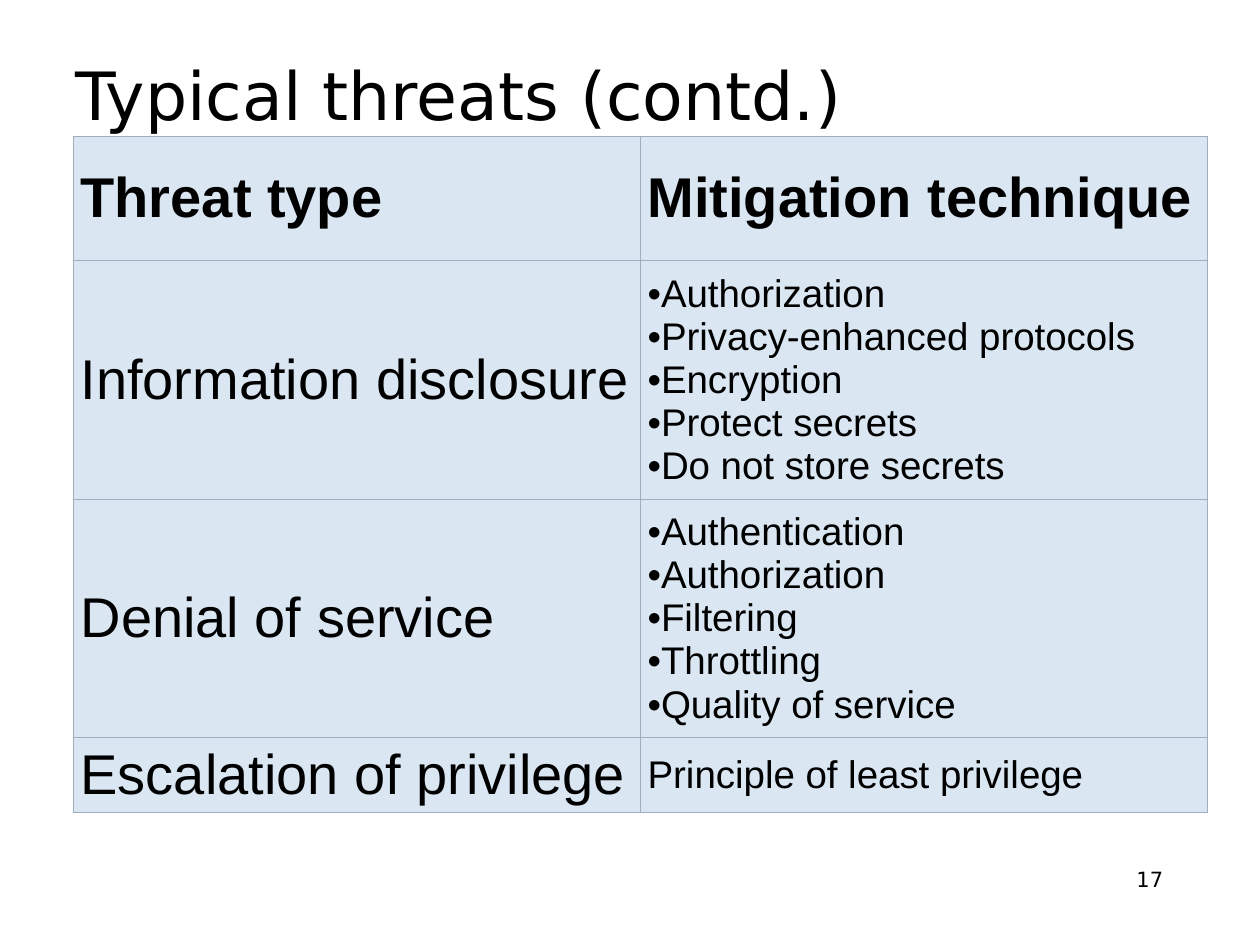
from lxml.etree import SubElement
from pptx import Presentation
from pptx.dml.color import RGBColor
from pptx.enum.text import MSO_ANCHOR, PP_ALIGN
from pptx.oxml.ns import qn
from pptx.util import Inches, Pt

BLACK = RGBColor(0x00, 0x00, 0x00)
PALE = RGBColor(0xDA, 0xE6, 0xF2)
EDGE = RGBColor(0x9F, 0xAE, 0xBD)


def style(para, size, face, bold=False):
    for run in para.runs:
        run.font.size = Pt(size)
        run.font.name = face
        run.font.bold = bold
        run.font.color.rgb = BLACK


def border(cell):
    props = cell._tc.get_or_add_tcPr()
    for spot, side in enumerate(("lnL", "lnR", "lnT", "lnB")):
        line = props.makeelement(qn(f"a:{side}"), {"w": str(Pt(0.75))})
        props.insert(spot, line)
        fill = SubElement(line, qn("a:solidFill"))
        SubElement(fill, qn("a:srgbClr"), val=str(EDGE))


deck = Presentation()
deck.slide_width = Inches(10)
deck.slide_height = Inches(7.5)
slide = deck.slides.add_slide(deck.slide_layouts[5])

title = slide.shapes.title
title.left, title.top = Inches(0.5), Inches(0.16)
title.width, title.height = Inches(9), Inches(0.95)
title.text_frame.text = "Typical threats (contd.)"
title.text_frame.vertical_anchor = MSO_ANCHOR.BOTTOM
title.text_frame.paragraphs[0].alignment = PP_ALIGN.LEFT
style(title.text_frame.paragraphs[0], 38, "DejaVu Sans")

number = slide.shapes.add_textbox(Inches(7.16), Inches(6.83), Inches(2.17), Inches(0.52))
number.text_frame.word_wrap = True
number.text_frame.text = "17"
number.text_frame.paragraphs[0].alignment = PP_ALIGN.RIGHT
style(number.text_frame.paragraphs[0], 12, "DejaVu Sans")

threats = [
    ("Threat type", ["Mitigation technique"], 0.99),
    ("Information disclosure",
     ["Authorization", "Privacy-enhanced protocols", "Encryption",
      "Protect secrets", "Do not store secrets"], 1.84),
    ("Denial of service",
     ["Authentication", "Authorization", "Filtering", "Throttling",
      "Quality of service"], 1.84),
    ("Escalation of privilege", ["Principle of least privilege"], 0.57),
]
high = sum(height for _, _, height in threats)
table = slide.shapes.add_table(
    len(threats), 2, Inches(0.58), Inches(1.08), Inches(9), Inches(high)).table
table.horz_banding = False

for row, (threat, cures, height) in enumerate(threats):
    table.rows[row].height = Inches(height)
    for col, lines in enumerate(([threat], cures)):
        cell = table.cell(row, col)
        cell.fill.solid()
        cell.fill.fore_color.rgb = PALE
        border(cell)
        cell.vertical_anchor = MSO_ANCHOR.MIDDLE
        cell.margin_left = cell.margin_right = Inches(0.06)
        cell.margin_top = cell.margin_bottom = Inches(0.03)
        cell.text_frame.text = "\n".join(lines)
        size = 22 if row and col else 32
        for para in cell.text_frame.paragraphs:
            para.line_spacing = 1.0
            para.space_before = para.space_after = Pt(0)
            style(para, size, "Arial", bold=row == 0)
            if len(lines) > 1:
                props = para._p.get_or_add_pPr()
                SubElement(props, qn("a:buFont"), typeface="Arial")
                SubElement(props, qn("a:buChar"), char="•")

deck.save("out.pptx")
